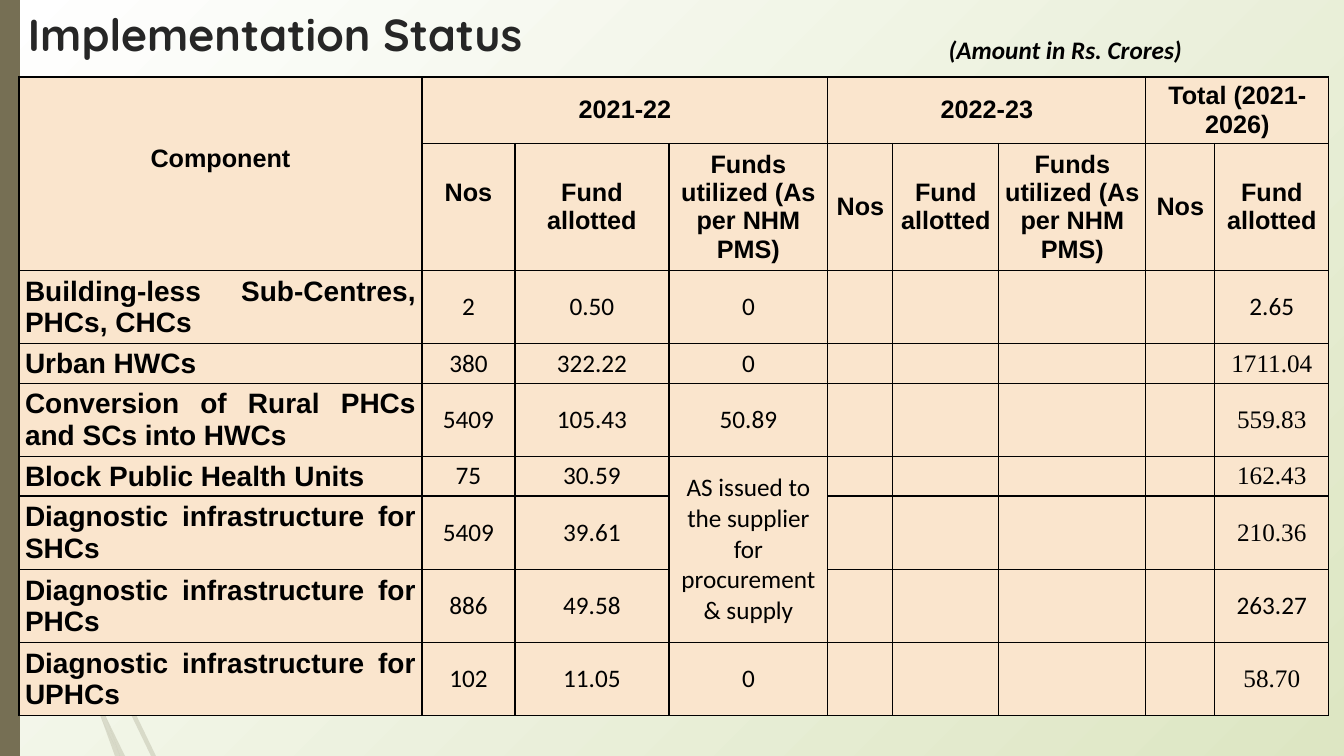
"""Build the Implementation Status slide with its funding table."""
import lxml.etree
import pptx
import pptx.dml.color
import pptx.enum.shapes
import pptx.enum.text
import pptx.oxml.ns
import pptx.util

PX = 914400 / 100.8
COLORS = {"bar": "766F54", "title": "262626", "ink": "000000", "cell": "FAE5CD",
          "light": "FFFFFF", "green": "DDE6C3"}
ALIGN = pptx.enum.text.PP_ALIGN
qn = pptx.oxml.ns.qn


def px(*lengths):
    return [pptx.util.Emu(round(length * PX)) for length in lengths]


def write(frame, text, font="Arial", size=18, color="ink", bold=True, italic=False,
          align=ALIGN.CENTER):
    frame.word_wrap = True
    para = frame.paragraphs[0]
    para.alignment = align
    span = para.add_run()
    span.text = text
    span.font.name = font
    span.font.size = pptx.util.Pt(size)
    span.font.bold = bold
    span.font.italic = italic
    span.font.color.rgb = pptx.dml.color.RGBColor.from_string(COLORS[color])


deck = pptx.Presentation()
deck.slide_width, deck.slide_height = px(1344, 756)
page = deck.slides.add_slide(deck.slide_layouts[6])

backdrop = page.background.fill
backdrop.gradient()
for stop, name in zip(backdrop.gradient_stops, ("light", "green")):
    stop.color.rgb = pptx.dml.color.RGBColor.from_string(COLORS[name])
gradient = page.element.find(".//" + qn("a:gradFill"))
gradient.remove(gradient.find(qn("a:lin")))
radial = lxml.etree.SubElement(gradient, qn("a:path"), path="circle")
lxml.etree.SubElement(radial, qn("a:fillToRect"), r="100000", b="100000")

WISPS = [
    [(93, 612), (89, 601), (89, 615), (124, 700), (151, 756), (156, 756), (128, 698)],
    [(120, 756), (125, 756), (106, 717)],
    [(94, 688), (71, 624), (31, 473), (17, 379), (11, 353), (28, 474), (66, 626),
     (93, 699), (102, 720), (100, 713)],
    [(85, 604), (88, 651), (94, 688), (97, 698), (106, 717), (104, 712), (92, 651),
     (89, 615), (89, 613)],
    [(102, 720), (115, 756), (120, 756)],
    [(97, 698), (94, 688), (100, 713), (102, 720), (120, 756), (106, 717)],
]
for points in WISPS:
    outline = page.shapes.build_freeform(*points[0], scale=PX)
    outline.add_line_segments(points[1:], close=True)
    wisp = outline.convert_to_shape()
    wisp.shadow.inherit = False
    wisp.line.fill.background()
    wisp.fill.solid()
    wisp.fill.fore_color.rgb = pptx.dml.color.RGBColor.from_string(COLORS["bar"])
    tint = wisp.element.spPr.find(".//" + qn("a:srgbClr"))
    lxml.etree.SubElement(tint, qn("a:alpha"), val="20000")

bar = page.shapes.add_shape(pptx.enum.shapes.MSO_SHAPE.RECTANGLE, *px(0, 0, 20, 756))
bar.shadow.inherit = False
bar.line.fill.background()
bar.fill.solid()
bar.fill.fore_color.rgb = pptx.dml.color.RGBColor.from_string(COLORS["bar"])

title = page.shapes.add_textbox(*px(18, 2, 1066, 80))
write(title.text_frame, "Implementation Status", font="Quicksand", size=32,
      color="title", align=ALIGN.LEFT)

WIDTHS = [403, 93, 154, 159, 65, 106, 147, 69, 114]
HEIGHTS = [65, 120, 72, 39, 71, 39, 71, 72, 71]
UTILIZED = "Funds utilized (As per NHM PMS)"
ROWS = [
    ["Component", "2021-22", "", "", "2022-23", "", "", "Total (2021-2026)", ""],
    ["", "Nos", "Fund allotted", UTILIZED, "Nos", "Fund allotted", UTILIZED, "Nos",
     "Fund allotted"],
    ["Building-less Sub-Centres, PHCs, CHCs", "2", "0.50", "0", "", "", "", "", "2.65"],
    ["Urban HWCs", "380", "322.22", "0", "", "", "", "", "1711.04"],
    ["Conversion of Rural PHCs and SCs into HWCs", "5409", "105.43", "50.89",
     "", "", "", "", "559.83"],
    ["Block Public Health Units", "75", "30.59",
     "AS issued to the supplier for procurement & supply", "", "", "", "", "162.43"],
    ["Diagnostic infrastructure for SHCs", "5409", "39.61", "", "", "", "", "", "210.36"],
    ["Diagnostic infrastructure for PHCs", "886", "49.58", "", "", "", "", "", "263.27"],
    ["Diagnostic infrastructure for UPHCs", "102", "11.05", "0", "", "", "", "", "58.70"],
]
SERIF_TOTALS = {"1711.04", "559.83", "162.43", "210.36", "58.70"}
MERGES = [(0, 0, 1, 0), (0, 1, 0, 3), (0, 4, 0, 6), (0, 7, 0, 8), (5, 3, 7, 3)]
RAISED = {(0, 0), (1, 1)}

table = page.shapes.add_table(len(ROWS), len(WIDTHS),
                              *px(19, 77, sum(WIDTHS), sum(HEIGHTS))).table
table.first_row = False
table.horz_banding = False
for column, width in zip(table.columns, px(*WIDTHS)):
    column.width = width
for row, height in zip(table.rows, px(*HEIGHTS)):
    row.height = height
for top, left, bottom, right in MERGES:
    table.cell(top, left).merge(table.cell(bottom, right))

for r, texts in enumerate(ROWS):
    for c, text in enumerate(texts):
        cell = table.cell(r, c)
        cell.vertical_anchor = pptx.enum.text.MSO_ANCHOR.MIDDLE
        cell.margin_left, cell.margin_right, cell.margin_top = px(6, 6, 3)
        cell.margin_bottom = px(32 if (r, c) in RAISED else 3)[0]
        properties = cell._tc.get_or_add_tcPr()
        for side in ("lnL", "lnR", "lnT", "lnB"):
            border = lxml.etree.SubElement(properties, qn("a:" + side), w="12700")
            paint = lxml.etree.SubElement(border, qn("a:solidFill"))
            lxml.etree.SubElement(paint, qn("a:srgbClr"), val=COLORS["ink"])
        cell.fill.solid()
        cell.fill.fore_color.rgb = pptx.dml.color.RGBColor.from_string(COLORS["cell"])
        if not text:
            continue
        if r < 2:
            write(cell.text_frame, text)
        elif c == 0:
            write(cell.text_frame, text, size=20, align=ALIGN.JUSTIFY)
        else:
            font = "Times New Roman" if text in SERIF_TOTALS else "Calibri"
            write(cell.text_frame, text, font=font, bold=False)

unit_note = page.shapes.add_textbox(*px(935, 29, 257, 40))
write(unit_note.text_frame, "(Amount in Rs. Crores)", font="Calibri", italic=True,
      align=ALIGN.RIGHT)

deck.save("out.pptx")
